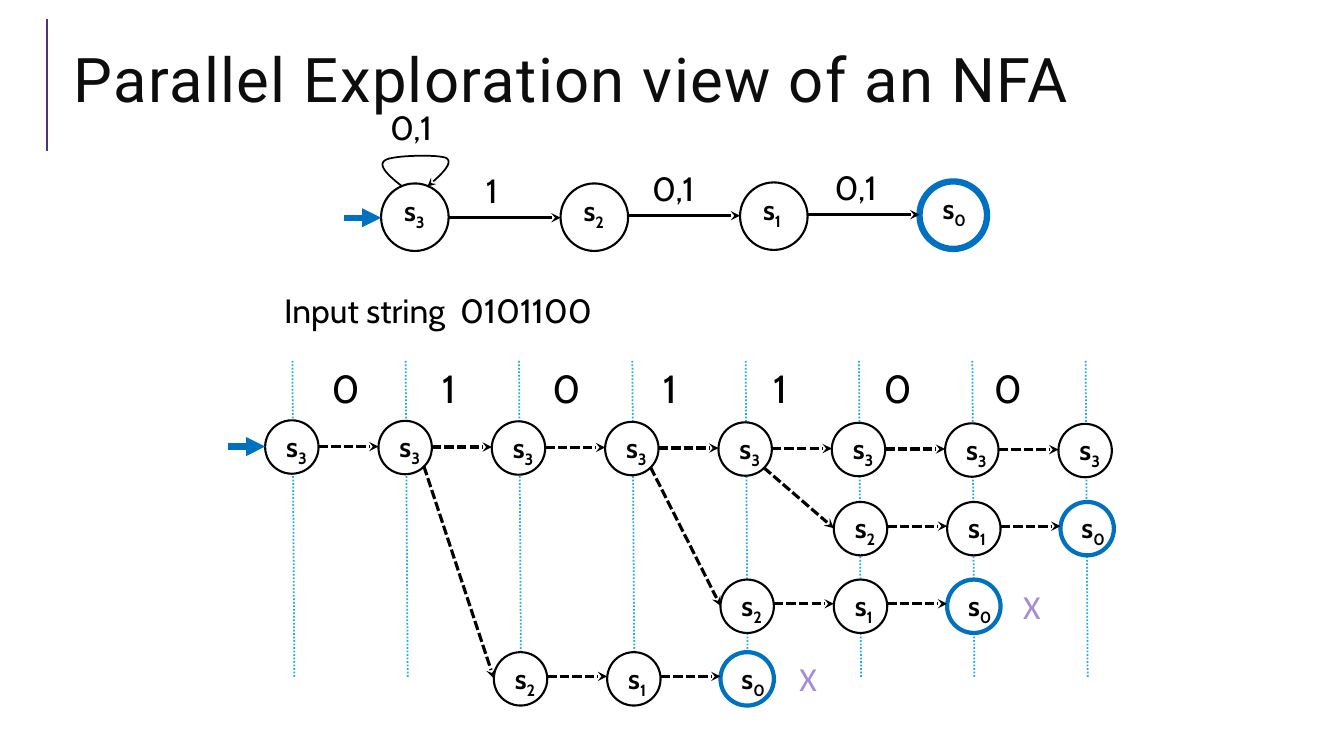
"""Build the slide showing the parallel exploration view of an NFA."""
from lxml import etree
from pptx import Presentation
from pptx.dml.color import RGBColor
from pptx.enum.dml import MSO_LINE
from pptx.enum.shapes import MSO_CONNECTOR, MSO_SHAPE
from pptx.enum.text import MSO_ANCHOR, MSO_AUTO_SIZE, PP_ALIGN
from pptx.oxml.ns import qn
from pptx.util import Inches, Pt

STRAIGHT, OVAL = MSO_CONNECTOR.STRAIGHT, MSO_SHAPE.OVAL
DOT, DASH = MSO_LINE.ROUND_DOT, MSO_LINE.SQUARE_DOT
GROW, MIDDLE, LEFT = MSO_AUTO_SIZE.SHAPE_TO_FIT_TEXT, MSO_ANCHOR.MIDDLE, PP_ALIGN.LEFT

TITLE = "Parallel Exploration view of an NFA"
INPUT = "0101100"
MACHINE = [("3", 1.82), ("2", 1.82), ("1", 1.81), ("0", 1.80)]
MACHINE_ARROWS = [2.16, 2.14, 2.13]
MACHINE_LABELS = [("0,1", 3.77, 1.01, 0.68), ("1", 4.72, 1.64, 0.4),
                  ("0,1", 6.37, 1.62, 0.68), ("0,1", 8.18, 1.61, 0.68)]
LOOP = [[(3.99, 1.85), (3.86, 1.75), (3.74, 1.64), (3.82, 1.59)],
        [(3.82, 1.59), (3.89, 1.54), (4.36, 1.53), (4.43, 1.57)],
        [(4.43, 1.57), (4.5, 1.62), (4.37, 1.74), (4.24, 1.85)]]
BRANCHES = [(2, 6.47), (4, 5.75), (5, 4.98)]
DEAD_ENDS = [(10.05, 5.76), (7.83, 6.48)]
C = {"black": "000000", "title": "0D0D0D", "white": "FFFFFF", "blue": "0070C0",
     "cyan": "1CADE4", "purple": "4C3282", "lilac": "A48DD3"}

MACHINE_X, MACHINE_STEP, MACHINE_D = 3.78, 1.78, 0.67
TREE_X, TREE_Y, TREE_STEP, TREE_D = 2.63, 4.17, 1.124, 0.53

prs = Presentation()
prs.slide_width, prs.slide_height = Inches(13.33), Inches(7.5)
s = prs.slides.add_slide(prs.slide_layouts[5])


def rgb(name):
    return RGBColor.from_string(C[name])


def style_run(r, size, font="Cabin", color="black", bold=False):
    r.font.size, r.font.name, r.font.bold = Pt(size), font, bold
    r.font.color.rgb = rgb(color)


def text(value, x, y, w, h, sub=None, **style):
    """Add a text box, with an optional subscript after its text."""
    tf = s.shapes.add_textbox(Inches(x), Inches(y), Inches(w), Inches(h)).text_frame
    tf.word_wrap, tf.auto_size = False, GROW
    for part in filter(None, (value, sub)):
        r = tf.paragraphs[0].add_run()
        r.text = part
        style_run(r, **style)
    if sub:
        r.font._element.set("baseline", "-25000")


def add_head(line, kind):
    etree.SubElement(line._get_or_add_ln(), qn("a:tailEnd"), type=kind)


def line(x1, y1, x2, y2, color="black", width=2.25, dash=None, head=None):
    """Add a straight line, dashed or with an arrowhead if asked."""
    cn = s.shapes.add_connector(STRAIGHT, Inches(x1), Inches(y1), Inches(x2), Inches(y2))
    cn.line.color.rgb, cn.line.width = rgb(color), Pt(width)
    if dash:
        cn.line.dash_style = dash
    if head:
        add_head(cn.line, head)
    etree.SubElement(cn._element.spPr, qn("a:effectLst"))


def state(n, x, y, d, dx, dy, accept_width, fill=None):
    """Add a state circle; state 0 accepts and has a thick blue outline."""
    sp = s.shapes.add_shape(OVAL, Inches(x), Inches(y), Inches(d), Inches(d))
    sp.shadow.inherit = False
    if fill:
        sp.fill.solid()
        sp.fill.fore_color.rgb = rgb(fill)
    else:
        sp.fill.background()
    sp.line.color.rgb = rgb("blue" if n == "0" else "black")
    sp.line.width = Pt(accept_width if n == "0" else 1.5)
    text("s", x + dx, y + dy, 0.44, 0.44, sub=n, size=20, bold=True)


def tree_state(n, x, y):
    state(n, x, y, TREE_D, 0.11, 0.04, 3, fill="white")


def bezier(points, t):
    weights = ((1 - t) ** 3, 3 * t * (1 - t) ** 2, 3 * t * t * (1 - t), t ** 3)
    return tuple(Inches(sum(w * p[i] for w, p in zip(weights, points))) for i in (0, 1))


def add_title():
    sp = s.shapes.title
    sp.left, sp.top, sp.width, sp.height = map(Inches, (0.63, 0.29, 12.23, 1.11))
    tf = sp.text_frame
    tf.word_wrap, tf.vertical_anchor = True, MIDDLE
    p = tf.paragraphs[0]
    p.alignment, p.line_spacing = LEFT, 0.8
    r = p.add_run()
    r.text = TITLE
    style_run(r, 44, font="Roboto", color="title")
    r.font._element.set("spc", "100")
    line(0.47, 1.5, 0.47, 0.19, color="purple", width=1.5)


def add_machine():
    xs = [MACHINE_X + MACHINE_STEP * i for i in range(len(MACHINE))]
    for (n, y), x in zip(MACHINE, xs):
        state(n, x, y, MACHINE_D, 0.13, 0.05, 4.5)
    line(3.41, 2.16, MACHINE_X, 2.16, color="blue", width=4.5, head="triangle")
    for x, nxt, y in zip(xs, xs[1:], MACHINE_ARROWS):
        line(x + MACHINE_D, y, nxt, y, head="stealth")
    steps = 16
    points = [bezier(curve, i / steps) for curve in LOOP for i in range(1, steps + 1)]
    start = bezier(LOOP[0], 0)
    fb = s.shapes.build_freeform(start[0], start[1], scale=1.0)
    fb.add_line_segments(points, close=False)
    sp = fb.convert_to_shape()
    sp.shadow.inherit = False
    sp.fill.background()
    sp.line.color.rgb, sp.line.width = rgb("black"), Pt(1.25)
    add_head(sp.line, "stealth")
    for label, x, y, w in MACHINE_LABELS:
        text(label, x, y, w, 0.5, size=24)


def add_tree():
    text(f"Input string  {INPUT}", 2.72, 2.83, 3.37, 0.5, size=24)
    columns = range(len(INPUT) + 1)
    xs = [TREE_X + TREE_STEP * c for c in columns]
    ys = [TREE_Y + 0.005 * c for c in columns]
    for x in xs:
        line(x + 0.27, 3.58, x + 0.29, 6.73, color="cyan", width=1.25, dash=DOT)
    for c, digit in enumerate(INPUT):
        text(digit, 3.19 + 1.095 * c, 3.57, 0.43, 0.57, size=28)
    for x, y in zip(xs, ys):
        tree_state("3", x, y)
    line(2.26, 4.43, TREE_X, 4.43, color="blue", width=4.5, head="triangle")
    for x, nxt, y in zip(xs, xs[1:], ys):
        line(x + TREE_D, y + 0.26, nxt, y + 0.26, dash=DASH, head="stealth")
    for first, y in BRANCHES:
        row = [x + 0.02 for x in xs[first:first + 3]]
        for n, x in zip("210", row):
            tree_state(n, x, y)
        for x, nxt in zip(row, row[1:]):
            line(x + TREE_D, y + 0.24, nxt, y + 0.24, dash=DASH, head="stealth")
        line(xs[first - 1] + 0.45, ys[first - 1] + 0.45, row[0], y + 0.26,
             dash=DASH, head="stealth")
    for x, y in DEAD_ENDS:
        text("X", x, y, 0.39, 0.5, size=24, font="Calibri", color="lilac")


if __name__ == "__main__":
    add_title()
    add_machine()
    add_tree()
    prs.save("out.pptx")
